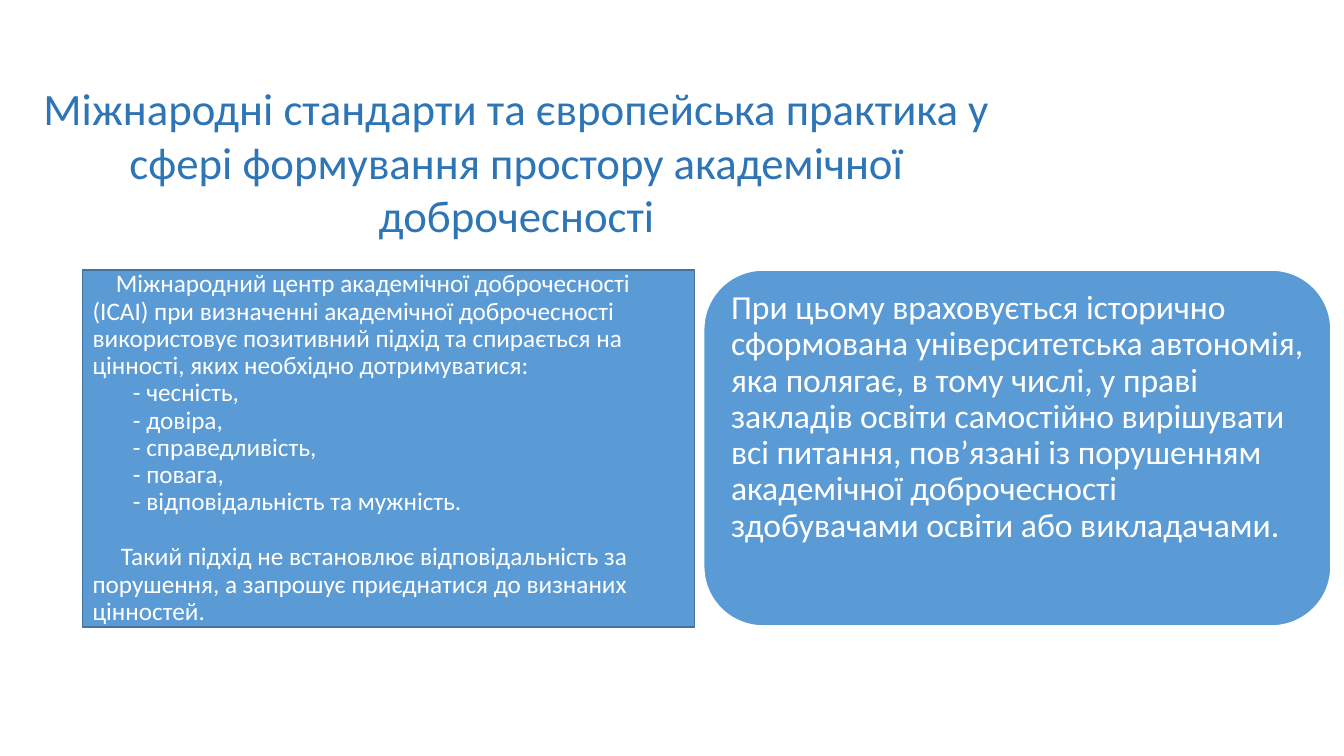
from dataclasses import dataclass

from pptx import Presentation
from pptx.dml.color import RGBColor
from pptx.enum.shapes import MSO_SHAPE
from pptx.enum.text import MSO_ANCHOR, MSO_AUTO_SIZE, PP_ALIGN
from pptx.util import Inches, Pt


@dataclass(frozen=True)
class Theme:
    font: str = "Calibri"
    title_color: RGBColor = RGBColor(0x2E, 0x75, 0xB6)
    panel_fill: RGBColor = RGBColor(0x5B, 0x9B, 0xD5)
    panel_border: RGBColor = RGBColor(0x43, 0x73, 0x9E)
    white: RGBColor = RGBColor(0xFF, 0xFF, 0xFF)
    title_size: int = 32
    values_size: int = 18
    autonomy_size: int = 24


THEME = Theme()

TITLE = ("Міжнародні стандарти та європейська практика у сфері "
         "формування простору академічної доброчесності")
INTRODUCTION = ("Міжнародний центр академічної доброчесності (ICAI) при визначенні "
                "академічної доброчесності використовує позитивний підхід та спирається "
                "на цінності, яких необхідно дотримуватися:")
VALUES = ["чесність,", "довіра,", "справедливість,", "повага,",
          "відповідальність та мужність."]
CONCLUSION = ("Такий підхід не встановлює відповідальність за порушення, "
              "а запрошує приєднатися до визнаних цінностей.")
AUTONOMY = ("При цьому враховується історично сформована університетська автономія, "
            "яка полягає, в тому числі, у праві закладів освіти самостійно вирішувати "
            "всі питання, пов’язані із порушенням академічної доброчесності "
            "здобувачами освіти або викладачами.")


def style_paragraph(paragraph, size, color, alignment, line_spacing, indent=0, space_before=0):
    """Apply the common paragraph format; indent is the first-line indent in inches."""
    properties = paragraph._p.get_or_add_pPr()
    properties.set("marL", "0")
    properties.set("indent", str(Inches(indent)))
    paragraph.alignment = alignment
    paragraph.line_spacing = line_spacing
    paragraph.space_before = Pt(space_before)
    paragraph.font.name = THEME.font
    paragraph.font.size = Pt(size)
    paragraph.font.color.rgb = color


def add_title(slide, left, top, width, height):
    title = slide.shapes.title
    title.left, title.top = Inches(left), Inches(top)
    title.width, title.height = Inches(width), Inches(height)
    frame = title.text_frame
    frame.word_wrap = True
    frame.auto_size = MSO_AUTO_SIZE.NONE
    frame.vertical_anchor = MSO_ANCHOR.TOP
    frame.text = TITLE
    style_paragraph(frame.paragraphs[0], THEME.title_size, THEME.title_color,
                    PP_ALIGN.CENTER, 1.0)


def add_panel(slide, preset, border, left, top, width, height):
    shape = slide.shapes.add_shape(preset, Inches(left), Inches(top),
                                   Inches(width), Inches(height))
    shape.shadow.inherit = False
    shape.fill.solid()
    shape.fill.fore_color.rgb = THEME.panel_fill
    shape.line.color.rgb = border
    shape.line.width = Pt(1)
    shape.text_frame.word_wrap = True
    return shape


def add_values_panel(slide, left, top, width, height):
    panel = add_panel(slide, MSO_SHAPE.RECTANGLE, THEME.panel_border,
                      left, top, width, height)
    frame = panel.text_frame
    frame.vertical_anchor = MSO_ANCHOR.MIDDLE
    # Text, first-line indent, space before
    rows = [(INTRODUCTION, 0.23, 0)]
    rows += [(f"- {value}", 0.4, 0) for value in VALUES]
    rows.append((CONCLUSION, 0.28, 20))
    for index, (text, indent, space_before) in enumerate(rows):
        paragraph = frame.add_paragraph() if index else frame.paragraphs[0]
        paragraph.text = text
        style_paragraph(paragraph, THEME.values_size, THEME.white,
                        PP_ALIGN.LEFT, 0.9, indent, space_before)


def add_autonomy_panel(slide, left, top, width, height):
    panel = add_panel(slide, MSO_SHAPE.ROUNDED_RECTANGLE, THEME.white,
                      left, top, width, height)
    frame = panel.text_frame
    frame.vertical_anchor = MSO_ANCHOR.TOP
    frame.margin_top = Inches(0.03)
    frame.text = AUTONOMY
    style_paragraph(frame.paragraphs[0], THEME.autonomy_size, THEME.white,
                    PP_ALIGN.LEFT, 0.9)


def main():
    presentation = Presentation()
    presentation.slide_width = Inches(13.33)
    presentation.slide_height = Inches(7.5)
    slide = presentation.slides.add_slide(presentation.slide_layouts.get_by_name("Title Only"))

    # Heading
    add_title(slide, 0, 0.75, 10.25, 1.72)
    # Values on the left, university autonomy on the right
    add_values_panel(slide, 0.82, 2.68, 6.07, 3.54)
    add_autonomy_panel(slide, 6.98, 2.68, 6.22, 3.53)

    presentation.save("out.pptx")


if __name__ == "__main__":
    main()
